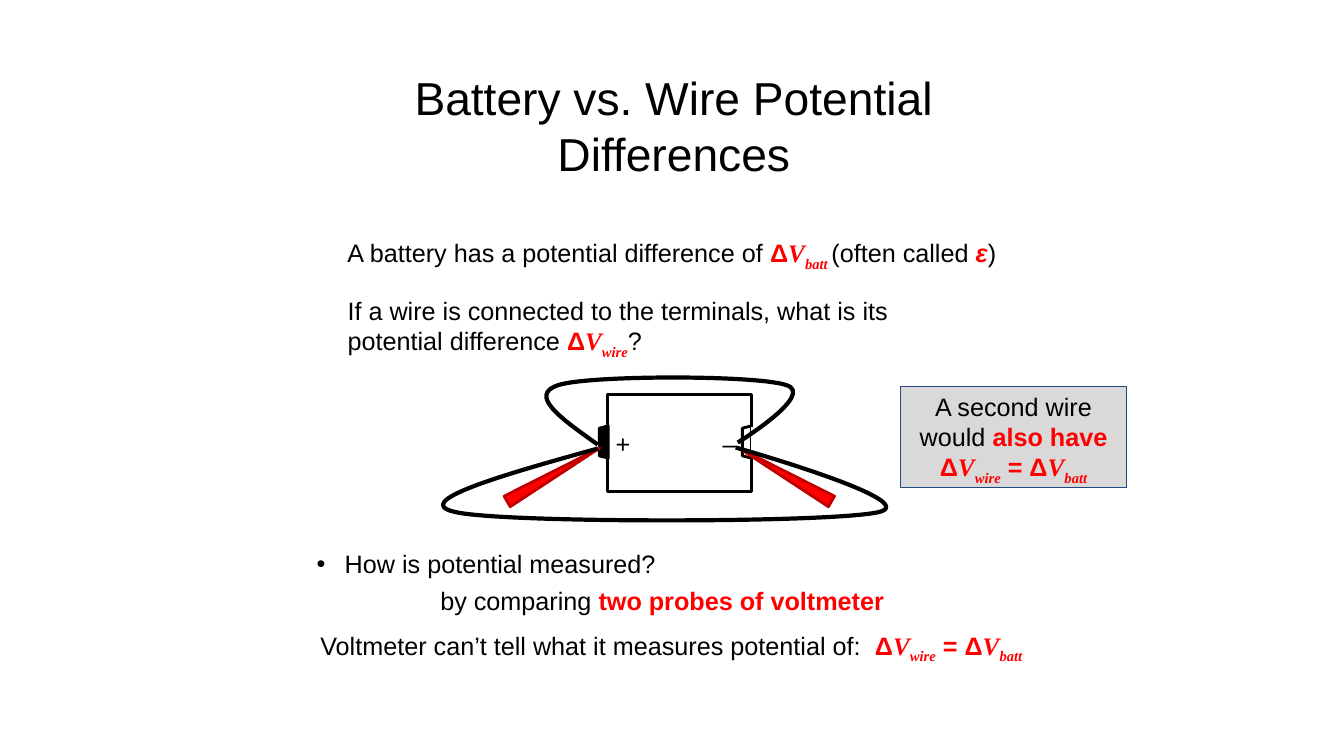
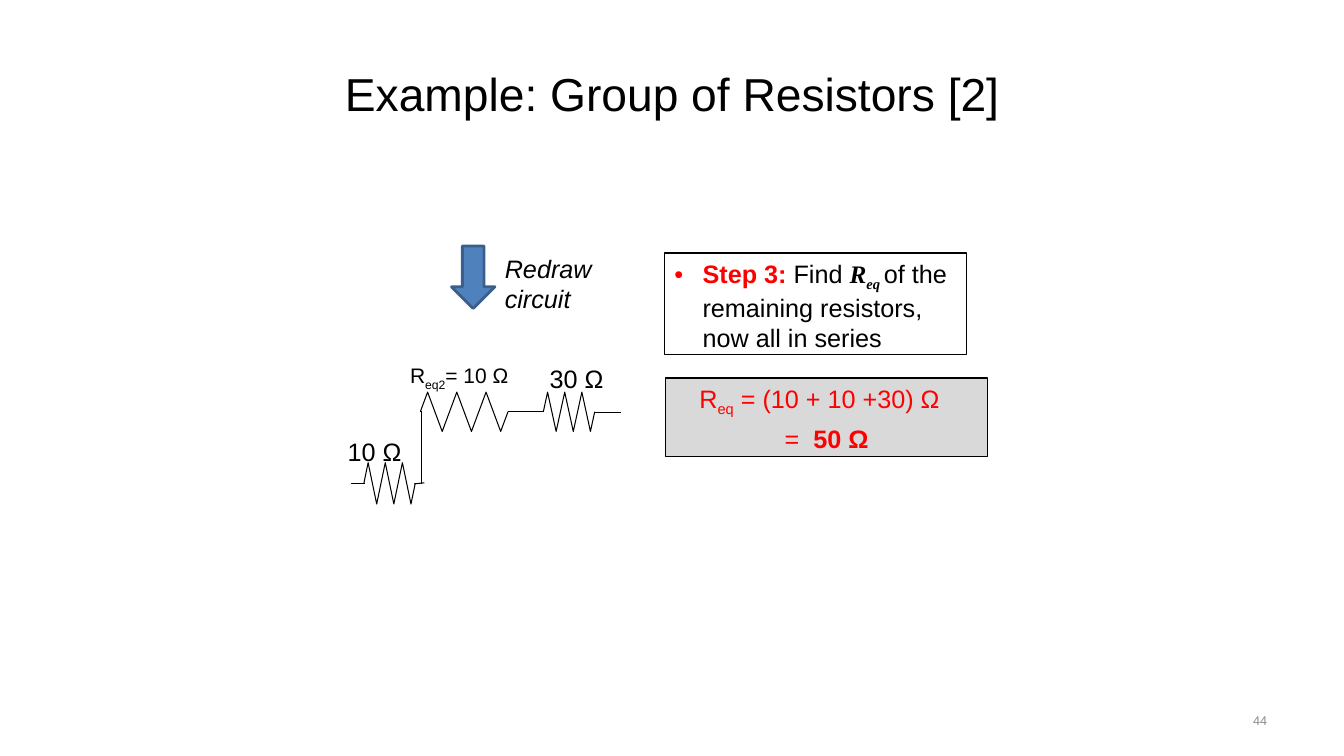
import pptx
import pptx.util
import pptx.dml.color
import pptx.enum.shapes
import pptx.enum.text
import pptx.oxml.ns
import lxml.etree

Pt = pptx.util.Pt
qn = pptx.oxml.ns.qn
KIND = pptx.enum.shapes.MSO_SHAPE
ANCHOR = pptx.enum.text.MSO_ANCHOR
LEFT, MID, RIGHT = (getattr(pptx.enum.text.PP_ALIGN, n) for n in ("LEFT", "CENTER", "RIGHT"))

# Shared look
INK = {"black": "000000", "red": "FF0000", "dark": "C00000", "white": "FFFFFF",
       "gray": "D9D9D9", "navy": "1F497D", "blue": "4F81BD", "edge": "3A5F8C",
       "mute": "8C8C8C"}
BASE = {"name": "Arial", "size": Pt(18), "bold": False, "italic": False}
TIMES = {"name": "Times New Roman", "bold": True, "italic": True}
# style: (ink, font values, lowered?)
STYLE = {
    "plain": ("black", {}, False),
    "title": ("black", {"size": Pt(33)}, False),
    "slant": ("black", {"italic": True}, False),
    "small": ("black", {"size": Pt(15)}, False),
    "smallsub": ("black", {"size": Pt(15)}, True),
    "page": ("mute", {"size": Pt(9)}, False),
    "red": ("red", {}, False),
    "redsub": ("red", {}, True),
    "bold": ("red", {"bold": True}, False),
    "slope": ("red", {"bold": True, "italic": True}, False),
    "var": ("red", TIMES, False),
    "sub": ("red", TIMES, True),
    "sym": ("black", TIMES, False),
    "symsub": ("black", TIMES, True),
}


def delta(name, lead=""):
    return [(lead + "Δ", "bold"), ("V", "var"), (name, "sub")]


SAME = delta("batt", " = ")

# Slide 1 content: box (left, top, width, height), align, runs
TITLE1 = ("Battery vs. Wire Potential Differences", (238.32, 55.44, 486, 67.68))
ASK = ((218.88, 388.08, 463.68, 28.8), [("How is potential measured?", "plain")])
NOTES1 = [
    ((228.96, 166.32, 501.84, 28.8), MID,
     [("A battery has a potential difference of ", "plain"), *delta("batt "),
      ("(often called ", "plain"), ("ε", "slope"), (")", "plain")]),
    ((241.2, 207.36, 463.68, 51.12), LEFT,
     [("If a wire is connected to the terminals, what is its potential difference ", "plain"),
      *delta("wire"), ("?", "plain")]),
    ((241.2, 414.72, 463.68, 28.8), MID,
     [("by comparing ", "plain"), ("two probes of voltmeter", "bold")]),
    ((209.52, 446.4, 540, 28.8), MID,
     [("Voltmeter can’t tell what it measures potential of:  ", "plain"),
      *delta("wire"), *SAME]),
    ((432.72, 302.4, 18, 28.8), MID, [("+", "plain")]),
    ((509.04, 302.4, 20.88, 28.8), MID, [("–", "plain")]),
]
CLAIM = ((642.96, 275.76, 162, 72.72),
         [("A second wire would ", "plain"), *delta("wire", "also have "), *SAME])
CELL = (450.72, 264.96, 69.84, 102.96)
CAPS = [((522, 312.48, 23.04, 6.48), None), ((419.76, 312.48, 23.04, 6.48), "black")]
GAP = (537.12, 326.88, 537.12, 305.28)
PROBES = [((556.56, 300.96, 8.64, 76.32), 300), ((390.96, 300.96, 8.64, 76.32), 60)]
# Wires: start, then two control points and an end for each curve
LOOPS = [
    [(426.96, 317.52), (401.76, 299.52), (376.56, 282.24), (398.88, 275.04),
     (421.2, 267.84), (540.72, 267.84), (561.6, 275.04),
     (583.2, 281.52), (527.04, 316.08), (527.04, 316.08)],
    [(426.96, 320.4), (359.28, 339.12), (291.6, 358.56), (325.44, 365.76),
     (358.56, 373.68), (594, 373.68), (627.84, 365.76),
     (660.96, 357.84), (525.6, 319.68), (525.6, 319.68)],
]

# Slide 2 content
TITLE2 = ("Example: Group of Resistors [2]", (48.24, 21.6, 864, 90))
STEP = ((474.48, 180.72, 216, 72.72),
        [("Step 3: ", "bold"), ("Find ", "plain"), ("R", "sym"), ("eq ", "symsub"),
         ("of the remaining resistors, now all in series", "plain")])
SUM = ((475.2, 270, 230.4, 56.16),
       [("R", "red"), ("eq", "redsub"), (" = (10 + 10 +30) Ω  ", "red")],
       [("=  ", "red"), ("50 Ω", "bold")])
NOTES2 = [
    ((688.32, 500.4, 223.92, 28.8), RIGHT, [("44", "page")], ANCHOR.MIDDLE),
    ((353.52, 177.12, 80.64, 51.12), LEFT, [("Redraw circuit", "slant")]),
    ((385.2, 256.32, 58.32, 28.8), MID, [("30 Ω ", "plain")]),
    ((236.88, 308.16, 66.24, 28.8), MID, [("10 Ω ", "plain")]),
    ((277.2, 255.6, 105.84, 25.2), MID,
     [("R", "small"), ("eq2", "smallsub"), ("= 10 Ω ", "small")]),
]
ARROW = (322.56, 175.68, 30.96, 44.64)
ZIGS = [(259.92, 345.24, 36.72, 29.52), (300.24, 294.12, 62.64, 28.08),
        (388.08, 294.12, 36.72, 28.08)]
LEADS = [(295.92, 345.6, 303.12, 344.88), (250.56, 345.6, 260.64, 345.6),
         (362.88, 293.76, 388.08, 293.76), (424.8, 294.48, 434.16, 294.48),
         (427.68, 294.48, 443.52, 294.48), (300.96, 293.76, 300.96, 345.6)]


# Helpers
def rgb(ink):
    return pptx.dml.color.RGBColor.from_string(INK[ink])


def put(obj, vals):
    for key, val in vals.items():
        setattr(obj, key, val)


def place(shape, box):
    put(shape, dict(zip(("left", "top", "width", "height"), map(Pt, box))))


def paint(shape, fill, line, wide):
    if fill:
        shape.fill.solid()
        shape.fill.fore_color.rgb = rgb(fill)
    else:
        shape.fill.background()
    shape.line.color.rgb = rgb(line)
    shape.line.width = Pt(wide)


def write(shape, align, *paras, anchor=ANCHOR.TOP, after=0):
    frame = shape.text_frame
    put(frame, {"word_wrap": True, "vertical_anchor": anchor,
                "auto_size": pptx.enum.text.MSO_AUTO_SIZE.NONE})
    for i, runs in enumerate(paras):
        para = frame.add_paragraph() if i else frame.paragraphs[0]
        last = i == len(paras) - 1
        put(para, {"alignment": align, "space_before": Pt(0),
                   "space_after": Pt(0 if last else after)})
        for text, style in runs:
            ink, vals, low = STYLE[style]
            run = para.add_run()
            run.text = text
            put(run.font, {**BASE, **vals})
            run.font.color.rgb = rgb(ink)
            if low:
                run.font._element.set("baseline", "-25000")


def start(deck, title, body):
    """Add a slide with its title and its one-item list."""
    slide = deck.slides.add_slide(deck.slide_layouts[1])
    head, item = slide.shapes.title, slide.placeholders[1]
    place(head, title[1])
    write(head, MID, [(title[0], "title")], anchor=ANCHOR.MIDDLE)
    place(item, body[0])
    write(item, LEFT, body[1])
    props = item.text_frame.paragraphs[0]._p.get_or_add_pPr()
    props.set("marL", str(Pt(20.16)))
    props.set("indent", str(-Pt(20.16)))
    return slide, item


def notes(slide, rows):
    for box, align, runs, *rest in rows:
        write(slide.shapes.add_textbox(*map(Pt, box)), align, runs,
              anchor=rest[0] if rest else ANCHOR.TOP)


def shape(slide, kind, box, fill, line, wide, turn=0):
    item = slide.shapes.add_shape(kind, *map(Pt, box))
    item.shadow.inherit = False
    item.rotation = turn
    paint(item, fill, line, wide)
    return item


def line(slide, ends, ink, wide):
    item = slide.shapes.add_connector(
        pptx.enum.shapes.MSO_CONNECTOR.STRAIGHT, *map(Pt, ends))
    item.line.color.rgb = rgb(ink)
    item.line.width = Pt(wide)
    lxml.etree.SubElement(item._element.spPr, qn("a:effectLst"))


def trace(slide, dots, wide):
    dots = [(Pt(x), Pt(y)) for x, y in dots]
    pen = slide.shapes.build_freeform(*dots[0])
    pen.add_line_segments(dots[1:], close=False)
    item = pen.convert_to_shape()
    item.shadow.inherit = False
    paint(item, None, "black", wide)
    return item


def bend(item):
    """Turn each three line segments into one cubic curve."""
    legs = list(item._element.iter(qn("a:lnTo")))
    for i in range(0, len(legs), 3):
        curve = lxml.etree.Element(qn("a:cubicBezTo"))
        legs[i].addprevious(curve)
        for leg in legs[i:i + 3]:
            curve.append(leg[0])
            leg.getparent().remove(leg)


def zigzag(x, y, w, h, teeth=6):
    peaks = [(x + w * (i + 0.5) / teeth, y + h / 2 * (1 if i % 2 else -1))
             for i in range(teeth)]
    return [(x, y), *peaks, (x + w, y)]


def battery(deck):
    slide, _ = start(deck, TITLE1, ASK)
    shape(slide, KIND.RECTANGLE, CELL, None, "black", 2, 270)
    for box, fill in CAPS:
        shape(slide, KIND.TRAPEZOID, box, fill, "black", 2, 270)
    line(slide, GAP, "white", 2)
    for box, turn in PROBES:
        shape(slide, KIND.ISOSCELES_TRIANGLE, box, "red", "dark", 2, turn)
    for dots in LOOPS:
        bend(trace(slide, dots, 3))
    notes(slide, NOTES1)
    box, runs = CLAIM
    write(shape(slide, KIND.RECTANGLE, box, "gray", "navy", 0.75), MID, runs)


def resistors(deck):
    slide, step = start(deck, TITLE2, STEP)
    paint(step, None, "black", 0.75)
    box, *paras = SUM
    write(shape(slide, KIND.RECTANGLE, box, "gray", "black", 0.75), MID, *paras, after=4.5)
    shape(slide, KIND.DOWN_ARROW, ARROW, "blue", "edge", 2)
    for zig in ZIGS:
        trace(slide, zigzag(*zig), 0.75)
    for ends in LEADS:
        line(slide, ends, "black", 0.75)
    notes(slide, NOTES2)


def main():
    deck = pptx.Presentation()
    put(deck, {"slide_width": Pt(960), "slide_height": Pt(540)})
    battery(deck)
    resistors(deck)
    deck.save("out.pptx")


if __name__ == "__main__":
    main()
